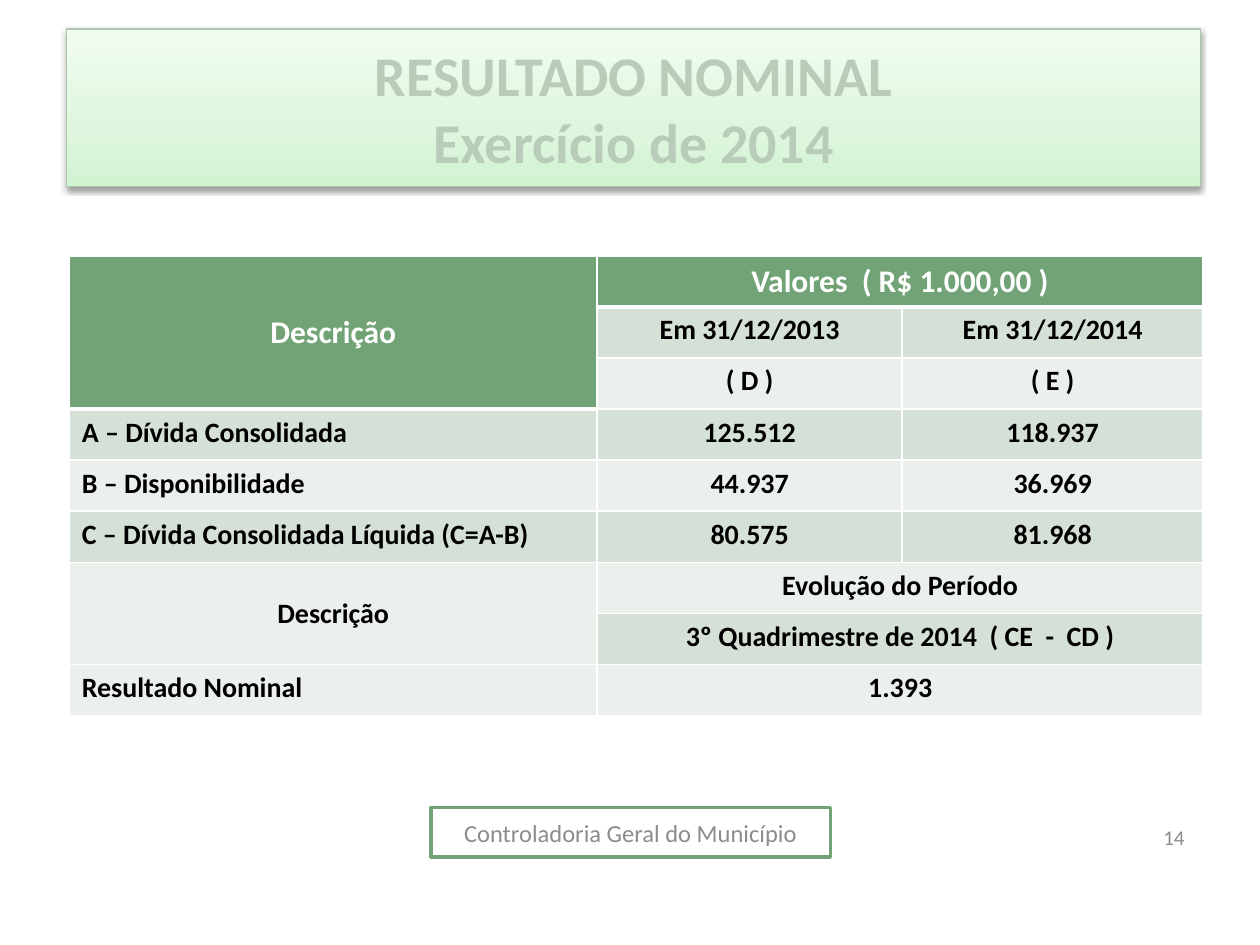
from copy import deepcopy

from lxml import etree
from pptx import Presentation
from pptx.dml.color import RGBColor
from pptx.enum.shapes import MSO_SHAPE
from pptx.enum.text import MSO_ANCHOR as Anchor, PP_ALIGN as Align
from pptx.oxml import parse_xml
from pptx.oxml.ns import nsdecls, qn
from pptx.util import Inches, Pt

GREEN, LIGHT, PALE, GREY = "72A376", "D5E0D6", "EBF0EC", "8C8C8C"


def color(value):
    return RGBColor.from_string(value)


def style(para, size, value, bold=False, align=Align.CENTER):
    para.alignment = align
    para.font.name = "Calibri"
    para.font.size = Pt(size)
    para.font.bold = bold
    para.font.color.rgb = color(value)


deck = Presentation()
deck.slide_width, deck.slide_height = Inches(10), Inches(7.5)
page = deck.slides.add_slide(deck.slide_layouts[5])

# Title banner with a vertical gradient and a soft shadow
title = page.shapes.title
title.left, title.top = Inches(0.53), Inches(0.23)
title.width, title.height = Inches(9), Inches(1.25)
title.fill.gradient()
title.fill.gradient_angle = 90
stops = title.fill.gradient_stops
for stop, position, value in zip(stops, (0, 1), ("D1F3D1", "F1FCF1")):
    stop.position = position
    stop.color.rgb = color(value)
first_stop = title.element.spPr.find(".//" + qn("a:gs"))
middle_stop = deepcopy(first_stop)
middle_stop.set("pos", "35000")
middle_stop.find(qn("a:srgbClr")).set("val", "DEF6DE")
first_stop.addnext(middle_stop)
title.line.color.rgb = color("ABC8AB")
title.line.width = Pt(0.75)
title.element.spPr.append(parse_xml(
    f'<a:effectLst {nsdecls("a")}><a:outerShdw blurRad="{Pt(3.1)}" dist="{Pt(1.6)}" '
    'dir="5400000" rotWithShape="0"><a:srgbClr val="000000"><a:alpha val="38000"/>'
    '</a:srgbClr></a:outerShdw></a:effectLst>'))
title.text_frame.text = "RESULTADO NOMINAL\vExercício de 2014"
title.text_frame.vertical_anchor = Anchor.MIDDLE
style(title.text_frame.paragraphs[0], 32, "B8CCB9", bold=True)

# Table of nominal results
rows = [
    ("Descrição", "Valores  ( R$ 1.000,00 )", ""),
    ("", "Em 31/12/2013", "Em 31/12/2014"),
    ("", "( D )", "( E )"),
    ("A – Dívida Consolidada", "125.512", "118.937"),
    ("B – Disponibilidade", "44.937", "36.969"),
    ("C – Dívida Consolidada Líquida (C=A-B)", "80.575", "81.968"),
    ("Descrição", "Evolução do Período", ""),
    ("", "3º Quadrimestre de 2014  ( CE  -  CD )", ""),
    ("Resultado Nominal", "1.393", ""),
]
table = page.shapes.add_table(len(rows), 3, Inches(0.55), Inches(2.03),
                              Inches(9), Inches(3.65)).table
for column, width in zip(table.columns, (4.19, 2.42, 2.39)):
    column.width = Inches(width)

for r, row in enumerate(rows):
    for c, text in enumerate(row):
        cell = table.cell(r, c)
        header = r == 0
        cell.fill.solid()
        cell.fill.fore_color.rgb = color(GREEN if header else LIGHT if r % 2 else PALE)
        # White borders, heavier below the header
        for index, side in enumerate("LRTB"):
            width = Pt(3 if header and side == "B" else 1)
            cell._tc.get_or_add_tcPr().insert(index, parse_xml(
                f'<a:ln{side} {nsdecls("a")} w="{width}"><a:solidFill>'
                f'<a:srgbClr val="FFFFFF"/></a:solidFill></a:ln{side}>'))
        if text:
            cell.text = text
        label = c == 0 and text != "Descrição"
        style(cell.text_frame.paragraphs[0], 18 if header else 16,
              "FFFFFF" if header else "000000", bold=True,
              align=Align.LEFT if label else Align.CENTER)
        if text == "Descrição":
            cell.vertical_anchor = Anchor.MIDDLE

for start, end in [((0, 0), (2, 0)), ((6, 0), (7, 0))] + [((r, 1), (r, 2)) for r in (0, 6, 7, 8)]:
    table.cell(*start).merge(table.cell(*end))

# Footer box
footer = page.shapes.add_shape(MSO_SHAPE.RECTANGLE, Inches(3.42), Inches(6.41),
                               Inches(3.17), Inches(0.39))
footer.shadow.inherit = False
footer.fill.solid()
footer.fill.fore_color.rgb = color("FFFFFF")
footer.line.color.rgb = color(GREEN)
footer.line.width = Pt(2)
footer.text_frame.text = "Controladoria Geral do Município"
footer.text_frame.vertical_anchor = Anchor.MIDDLE
style(footer.text_frame.paragraphs[0], 14, GREY)

# Page number
number = page.shapes.add_textbox(Inches(7.17), Inches(6.41), Inches(2.33), Inches(0.47))
number.text_frame.word_wrap = True
number.text_frame.text = "14"
number.text_frame.vertical_anchor = Anchor.MIDDLE
style(number.text_frame.paragraphs[0], 12, GREY, align=Align.RIGHT)

deck.save("out.pptx")
